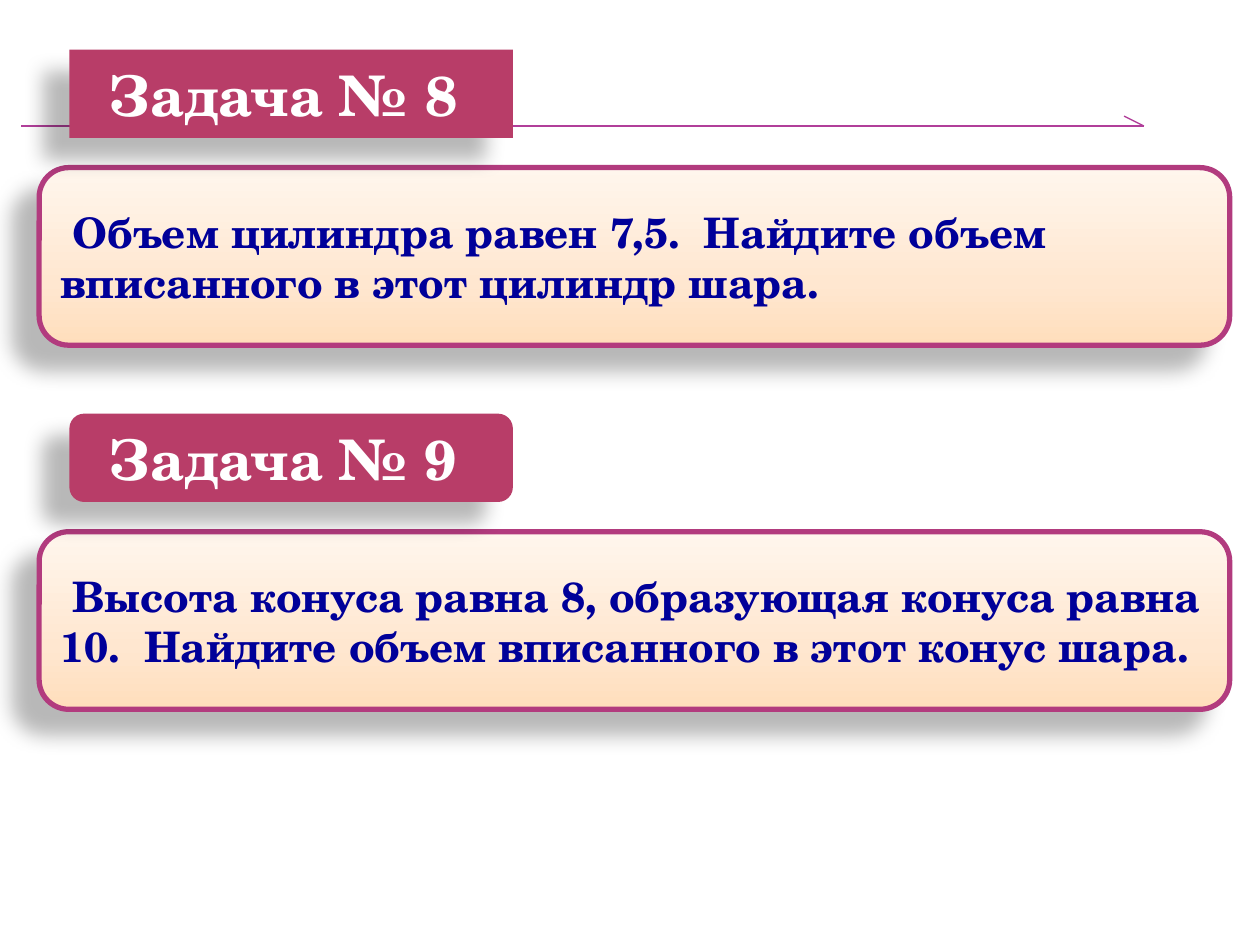
from copy import deepcopy

from lxml.etree import SubElement
from pptx import Presentation
from pptx.dml.color import RGBColor as RGB
from pptx.enum.shapes import MSO_CONNECTOR as LINE, MSO_SHAPE as SHAPE
from pptx.enum.text import MSO_ANCHOR as ANCHOR, MSO_AUTO_SIZE as AUTO, PP_ALIGN as ALIGN
from pptx.oxml import parse_xml
from pptx.oxml.ns import nsdecls, qn
from pptx.util import Cm, Pt

TASKS = [
    ("Задача № 8 ", " Объем цилиндра равен 7,5.  Найдите объем вписанного в этот цилиндр шара."),
    ("Задача № 9 ", " Высота конуса равна 8, образующая конуса равна 10.  "
                    "Найдите объем вписанного в этот конус шара."),
]
ARROW = [((0.43, 2.54), (23.06, 2.54)), ((22.66, 2.34), (23.06, 2.54))]
HEADING_BOX = (1.4, 1.0, 8.94, 1.78)
TEXT_BOX = (0.79, 3.38, 24.0, 3.58)
TASK_STEP = 7.34


class Theme:
    font = "TeX Gyre Schola"
    heading_size, text_size = Pt(32), Pt(24)
    heading_fill, heading_text = RGB.from_string("B83D68"), RGB.from_string("FFFFFF")
    border, text = RGB.from_string("B23B7E"), RGB.from_string("000099")
    arrow = RGB.from_string("B13F9A")
    gradient = [(0, "FFDEBC"), (0.35, "FFE7D0"), (1, "FFF6ED")]


def place(sp, box, row):
    left, top, width, height = box
    sp.left, sp.top = Cm(left), Cm(top + row * TASK_STEP)
    sp.width, sp.height = Cm(width), Cm(height)


def cast_shadow(sp):
    sp.shadow.inherit = False
    effects = sp._element.spPr.find(qn("a:effectLst"))
    outer = SubElement(effects, qn("a:outerShdw"), blurRad=str(Pt(11.8)), dist=str(Pt(19.7)),
                       dir=str(141 * 60000), algn="ctr", rotWithShape="0")
    color = SubElement(outer, qn("a:srgbClr"), val="000000")
    SubElement(color, qn("a:alpha"), val="28000")


def fill_gradient(sp):
    sp.fill.gradient()
    sp.fill.gradient_angle = 90
    stops = sp._element.spPr.find(".//" + qn("a:gsLst"))
    stops.insert(1, deepcopy(stops[0]))
    for stop, (position, color) in zip(sp.fill.gradient_stops, Theme.gradient):
        stop.position = position
        stop.color.rgb = RGB.from_string(color)


def write(sp, text, size, color, align):
    tf = sp.text_frame
    tf.word_wrap, tf.auto_size = True, AUTO.NONE
    tf.vertical_anchor = ANCHOR.MIDDLE
    p = tf.paragraphs[0]
    p.text, p.alignment = text, align
    p.font.name, p.font.size, p.font.bold = Theme.font, size, True
    p.font.color.rgb = color


def add_arrow(s):
    for start, end in ARROW:
        line = s.shapes.add_connector(LINE.STRAIGHT, *map(Cm, start + end))
        line.line.color.rgb, line.line.width = Theme.arrow, Pt(0.75)
        SubElement(line._element.spPr, qn("a:effectLst"))


def add_text_box(s, text, row):
    sp = s.shapes.add_shape(SHAPE.ROUNDED_RECTANGLE, 0, 0, 0, 0)
    place(sp, TEXT_BOX, row)
    fill_gradient(sp)
    sp.line.color.rgb, sp.line.width = Theme.border, Pt(3)
    cast_shadow(sp)
    write(sp, text, Theme.text_size, Theme.text, ALIGN.LEFT)


def add_heading(s, text, row):
    """The first heading is the slide title; later ones are shapes of the same form."""
    if row == 0:
        sp = s.shapes.title
        place(sp, HEADING_BOX, row)
        sp._element.spPr.insert(1, parse_xml(
            f'<a:prstGeom {nsdecls("a")} prst="roundRect"><a:avLst/></a:prstGeom>'))
        s.shapes._spTree.append(sp._element)  # in front of the arrow
    else:
        sp = s.shapes.add_shape(SHAPE.ROUNDED_RECTANGLE, 0, 0, 0, 0)
        place(sp, HEADING_BOX, row)
    sp.fill.solid()
    sp.fill.fore_color.rgb = Theme.heading_fill
    sp.line.fill.background()
    cast_shadow(sp)
    write(sp, text, Theme.heading_size, Theme.heading_text, ALIGN.CENTER)


def main():
    prs = Presentation()
    prs.slide_width, prs.slide_height = Cm(25.4), Cm(19.05)
    s = prs.slides.add_slide(prs.slide_layouts[5])
    add_arrow(s)
    for row, (heading, text) in enumerate(TASKS):
        add_text_box(s, text, row)
        add_heading(s, heading, row)
    prs.save("out.pptx")


if __name__ == "__main__":
    main()
